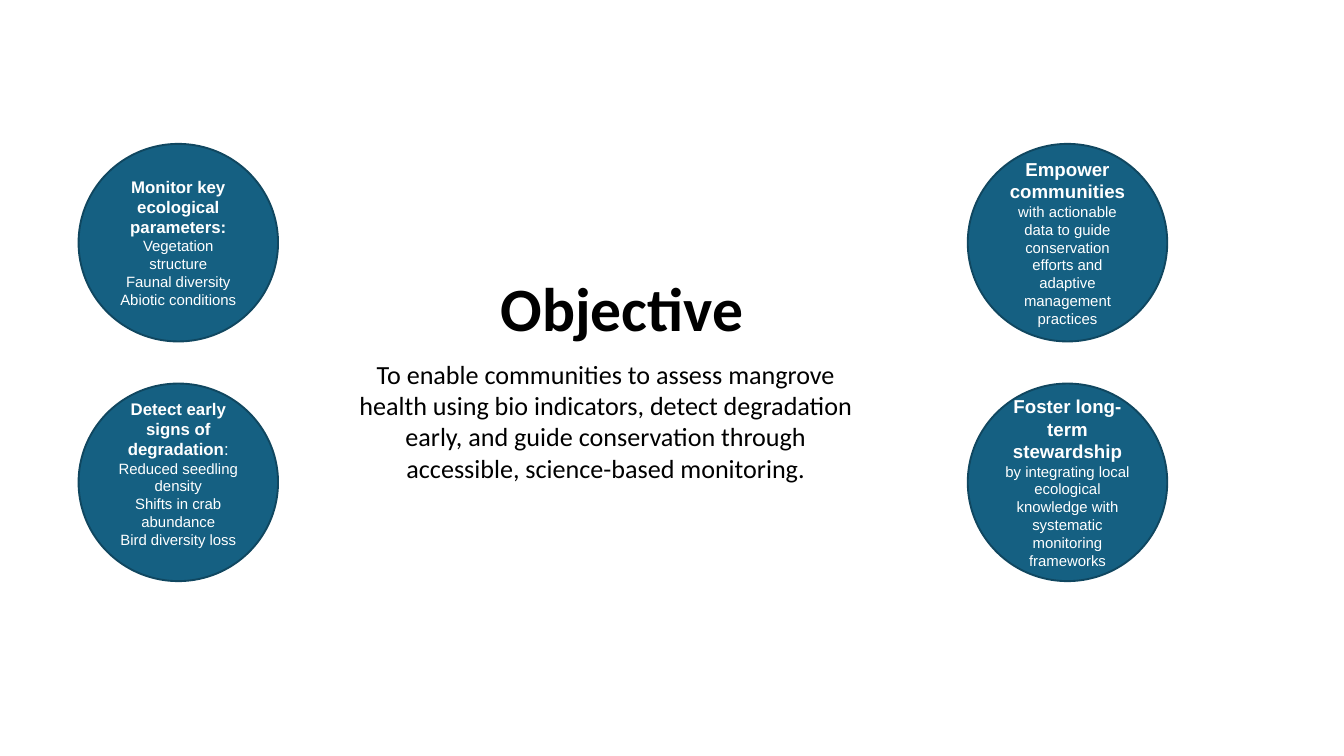
import pptx
import pptx.dml.color
import pptx.enum.shapes
import pptx.enum.text
import pptx.util

Cm, Pt = pptx.util.Cm, pptx.util.Pt
Align, Anchor = pptx.enum.text.PP_ALIGN, pptx.enum.text.MSO_ANCHOR


def tint(code):
    return pptx.dml.color.RGBColor.from_string(code)


class Deck:
    ink, light, fill, edge = "000000", "FFFFFF", "156082", "104760"
    wide, high = 7.54, 7.47

    def __init__(self, slide):
        self.slide = slide

    def style(self, font, face, size, color, bold=False):
        font.name, font.size, font.bold = face, Pt(size), bold
        font.color.rgb = tint(color)

    def text(self, words, box, size, bold=False, align=Align.CENTER,
             anchor=Anchor.TOP, wrap=True):
        frame = self.slide.shapes.add_textbox(*map(Cm, box)).text_frame
        frame.word_wrap, frame.vertical_anchor = wrap, anchor
        para = frame.paragraphs[0]
        para.text, para.alignment = words, align
        self.style(para.font, "Calibri", size, self.ink, bold)
        return para

    def circle(self, left, top, paras, lift=0):
        """Draw a circle; paras hold (text, size, bold) runs, lift moves them up."""
        shape = self.slide.shapes.add_shape(
            pptx.enum.shapes.MSO_SHAPE.OVAL,
            Cm(left), Cm(top), Cm(self.wide), Cm(self.high))
        shape.shadow.inherit = False
        shape.fill.solid()
        shape.fill.fore_color.rgb = tint(self.fill)
        shape.line.color.rgb = tint(self.edge)
        shape.line.width = Pt(2)
        frame = shape.text_frame
        frame.word_wrap, frame.vertical_anchor = True, Anchor.MIDDLE
        frame.margin_bottom = Cm(0.13 + lift)
        for i, runs in enumerate(paras):
            para = frame.add_paragraph() if i else frame.paragraphs[0]
            para.alignment = Align.CENTER
            for words, size, bold in runs:
                run = para.add_run()
                run.text = words
                self.style(run.font, "Arial", size, self.light, bold)


def points(*lines):
    return [[(line, 16, False)] for line in lines]


def claim(head, rest):
    return [[(head, 20, True), (rest, 16, False)]]


def main():
    prs = pptx.Presentation()
    prs.slide_width, prs.slide_height = Cm(50.8), Cm(28.58)
    deck = Deck(prs.slides.add_slide(prs.slide_layouts[6]))

    title = deck.text("Objective", (18.67, 11.2, 9.73, 1.12), 66, True,
                      Align.LEFT, Anchor.MIDDLE, False)
    title.line_spacing = 0.9
    deck.text("To enable communities to assess mangrove health using bio "
              "indicators, detect degradation early, and guide conservation "
              "through accessible, science-based monitoring.",
              (12.88, 13.41, 20.02, 5.05), 28)

    left, right = 2.97, 36.58
    upper, lower = 5.44, 14.5
    deck.circle(left, upper, [
        [("Monitor key ecological parameters:", 18, True)],
        *points("Vegetation structure", "Faunal diversity",
                "Abiotic conditions")])
    deck.circle(left, lower, [
        [("Detect early signs of degradation", 18, True), (":", 18, False)],
        *points("Reduced seedling density", "Shifts in crab abundance",
                "Bird diversity loss")], lift=0.65)
    deck.circle(right, upper, claim(
        "Empower communities ",
        "with actionable data to guide conservation efforts and adaptive "
        "management practices"))
    deck.circle(right, lower, claim(
        "Foster long-term stewardship ",
        "by integrating local ecological knowledge with systematic "
        "monitoring frameworks"))
    prs.save("out.pptx")


if __name__ == "__main__":
    main()
